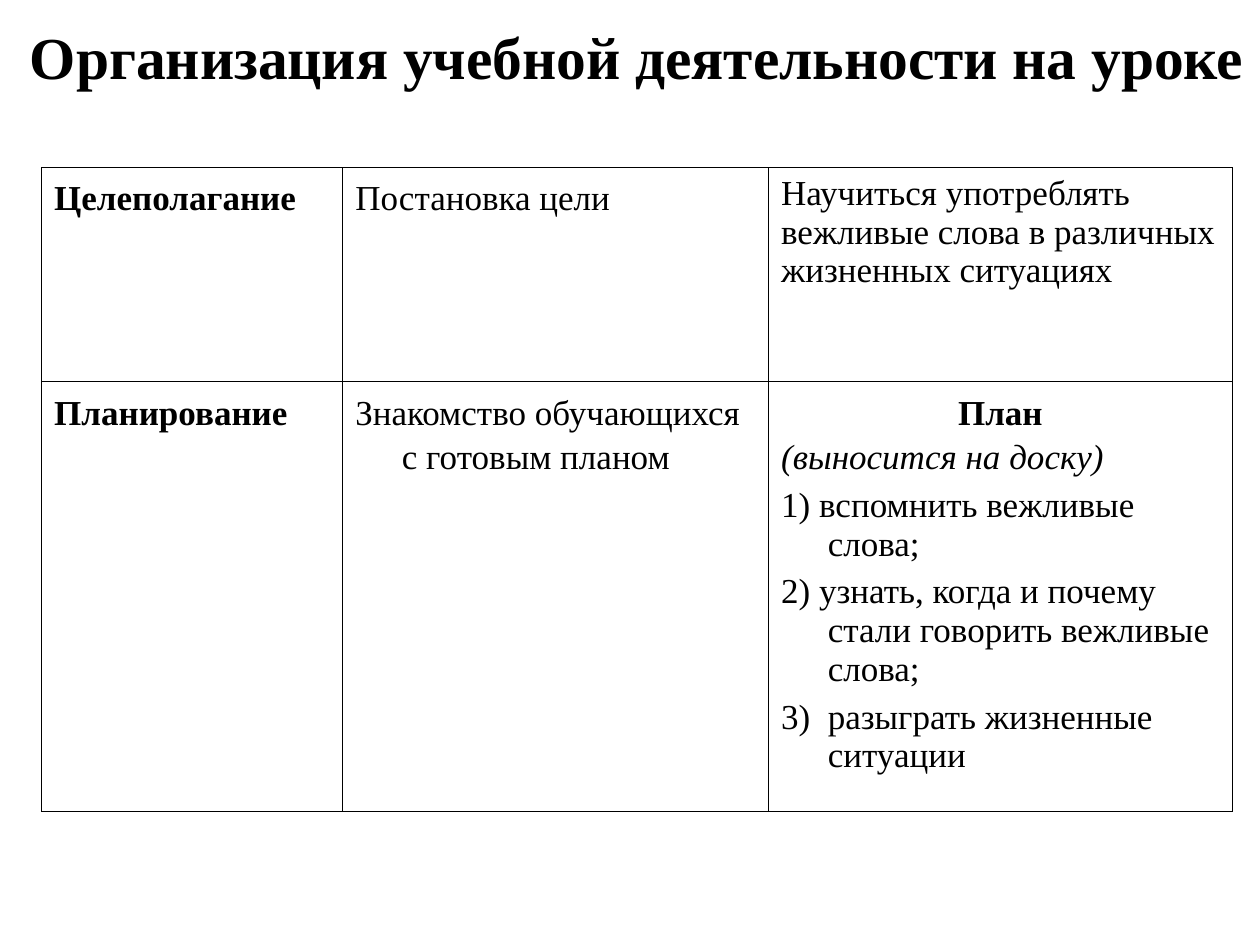
from dataclasses import dataclass

from lxml.etree import SubElement
from pptx import Presentation
from pptx.dml.color import RGBColor
from pptx.enum.text import MSO_ANCHOR, PP_ALIGN
from pptx.oxml.ns import qn
from pptx.util import Inches, Pt


@dataclass(frozen=True)
class Theme:
    font: str = "Times New Roman"
    ink: str = "000000"
    paper: str = "FFFFFF"
    title_size: int = 34
    body_size: int = 20
    border: float = 0.45
    loose: float = 1.15
    hang: float = 0.37
    heading_hang: float = 0.51
    step_gap: int = 5


@dataclass(frozen=True)
class Line:
    text: str
    bold: bool = False
    italic: bool = False
    align: PP_ALIGN = PP_ALIGN.LEFT
    loose: bool = True
    hang: float = 0
    gap: int = 0


THEME = Theme()
WIDTH, HEIGHT = 10, 7.5
COLUMNS = (2.39, 3.38, 3.68)
ROWS = (1.7, 3.41)

TITLE = "Организация учебной деятельности на уроке"
STEPS = (
    "1) вспомнить вежливые слова;",
    "2) узнать, когда и почему стали говорить вежливые слова;",
    "3)\tразыграть жизненные ситуации",
)
PLAN = [
    Line("План", bold=True, align=PP_ALIGN.CENTER, hang=THEME.heading_hang),
    Line("(выносится на доску)", italic=True, hang=THEME.hang),
] + [Line(step, loose=False, hang=THEME.hang, gap=THEME.step_gap)
     for step in STEPS]

STAGES = [
    [
        [Line("Целеполагание", bold=True)],
        [Line("Постановка цели", align=PP_ALIGN.JUSTIFY)],
        [Line("Научиться употреблять вежливые слова в различных "
              "жизненных ситуациях", loose=False)],
    ],
    [
        [Line("Планирование", bold=True)],
        [Line("Знакомство обучающихся с готовым планом", hang=THEME.hang)],
        PLAN,
    ],
]


def add_span(para, line, size):
    span = para.add_run()
    span.text = line.text
    span.font.name = THEME.font
    span.font.size = Pt(size)
    span.font.bold = line.bold
    span.font.italic = line.italic
    span.font.color.rgb = RGBColor.from_string(THEME.ink)


def write_lines(frame, lines, size):
    for index, line in enumerate(lines):
        para = frame.add_paragraph() if index else frame.paragraphs[0]
        para.alignment = line.align
        para.line_spacing = THEME.loose if line.loose else 1.0
        para.space_before = Pt(line.gap)
        if line.hang:
            properties = para._p.get_or_add_pPr()
            properties.set("marL", str(Inches(THEME.hang)))
            properties.set("indent", str(-Inches(line.hang)))
        add_span(para, line, size)


def outline_cell(cell):
    properties = cell._tc.get_or_add_tcPr()
    # Borders come before the fill in the cell properties
    for side in ("a:lnL", "a:lnR", "a:lnT", "a:lnB"):
        edge = SubElement(properties, qn(side), w=str(Pt(THEME.border)))
        fill = SubElement(edge, qn("a:solidFill"))
        SubElement(fill, qn("a:srgbClr"), val=THEME.ink)


def add_title(page):
    top, right, bottom = Inches(0.09), Inches(WIDTH * 1.011), Inches(0.8)
    builder = page.shapes.build_freeform(0, top)
    builder.add_line_segments([(right, top), (right, bottom), (0, bottom)])
    box = builder.convert_to_shape()
    box.shadow.inherit = False
    box.fill.background()
    box.line.fill.background()
    frame = box.text_frame
    frame.word_wrap = True
    frame.vertical_anchor = MSO_ANCHOR.MIDDLE
    title = Line(TITLE, bold=True, align=PP_ALIGN.CENTER, loose=False)
    write_lines(frame, [title], THEME.title_size)


def add_stage_table(page):
    table = page.shapes.add_table(
        len(ROWS), len(COLUMNS), Inches(0.33), Inches(1.33),
        Inches(sum(COLUMNS)), Inches(sum(ROWS))).table
    table.first_row = table.horz_banding = False
    for column, width in zip(table.columns, COLUMNS):
        column.width = Inches(width)
    for row, height, stage in zip(table.rows, ROWS, STAGES):
        row.height = Inches(height)
        for cell, lines in zip(row.cells, stage):
            outline_cell(cell)
            cell.fill.background()
            write_lines(cell.text_frame, lines, THEME.body_size)


def main():
    deck = Presentation()
    deck.slide_width, deck.slide_height = Inches(WIDTH), Inches(HEIGHT)
    page = deck.slides.add_slide(deck.slide_layouts[6])
    page.background.fill.solid()
    page.background.fill.fore_color.rgb = RGBColor.from_string(THEME.paper)

    # Lesson stages, then the heading above them
    add_stage_table(page)
    add_title(page)
    deck.save("out.pptx")


if __name__ == "__main__":
    main()
